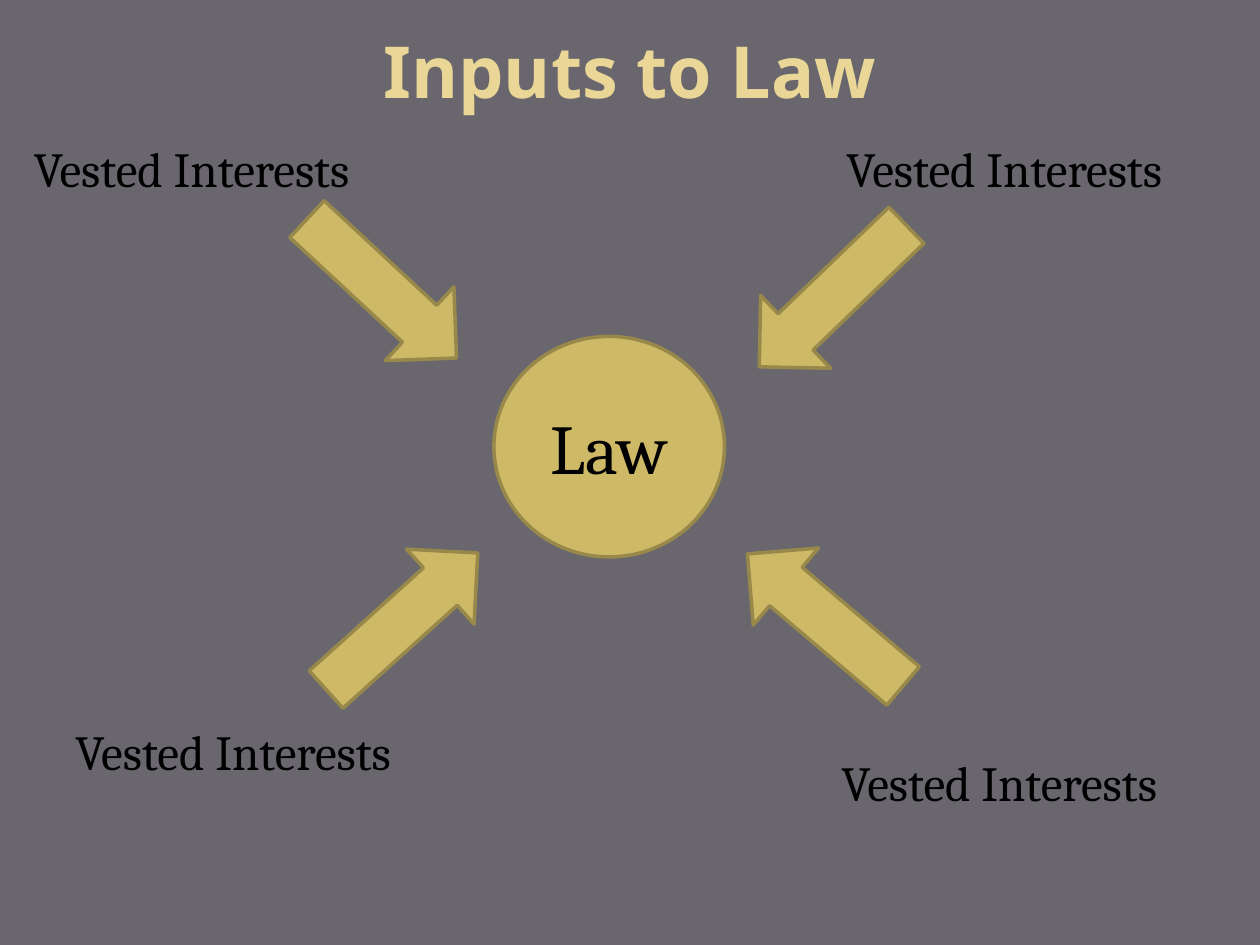
"""Build a slide showing four vested interests feeding into law."""
from dataclasses import dataclass

from pptx import Presentation
from pptx.dml.color import RGBColor
from pptx.enum.shapes import MSO_SHAPE
from pptx.enum.text import MSO_ANCHOR, MSO_AUTO_SIZE, PP_ALIGN
from pptx.util import Inches, Pt

ELLIPSE = MSO_SHAPE.OVAL
DOWN_ARROW = MSO_SHAPE.DOWN_ARROW
CENTER = PP_ALIGN.CENTER
MIDDLE = MSO_ANCHOR.MIDDLE
FIT_SHAPE = MSO_AUTO_SIZE.SHAPE_TO_FIT_TEXT
TITLE_ONLY = 5


@dataclass(frozen=True)
class Theme:
    background: RGBColor = RGBColor.from_string("69676D")
    title: RGBColor = RGBColor.from_string("EAD696")
    fill: RGBColor = RGBColor.from_string("CEB966")
    outline: RGBColor = RGBColor.from_string("98894B")
    text: RGBColor = RGBColor.from_string("000000")
    title_font: str = "Noto Sans"
    body_font: str = "Cambria"
    title_size: Pt = Pt(41)
    law_size: Pt = Pt(40)
    label_size: Pt = Pt(28)
    outline_width: Pt = Pt(2)


theme = Theme()


def style_text(paragraph, text, font_name, size, color):
    paragraph.text = text
    paragraph.font.name = font_name
    paragraph.font.size = size
    paragraph.font.color.rgb = color


def add_gold_shape(kind, left, top, width, height):
    shape = slide.shapes.add_shape(
        kind, Inches(left), Inches(top), Inches(width), Inches(height)
    )
    shape.shadow.inherit = False
    shape.fill.solid()
    shape.fill.fore_color.rgb = theme.fill
    shape.line.color.rgb = theme.outline
    shape.line.width = theme.outline_width
    return shape


presentation = Presentation()
presentation.slide_width = Inches(10)
presentation.slide_height = Inches(7.5)
slide = presentation.slides.add_slide(presentation.slide_layouts[TITLE_ONLY])
slide.background.fill.solid()
slide.background.fill.fore_color.rgb = theme.background

title = slide.shapes.title
title.left, title.top = Inches(0.5), Inches(0.08)
title.width, title.height = Inches(9), Inches(0.95)
title.text_frame.vertical_anchor = MIDDLE
title_paragraph = title.text_frame.paragraphs[0]
style_text(title_paragraph, "Inputs to Law", theme.title_font, theme.title_size, theme.title)
title_paragraph.font.bold = True
title_paragraph.alignment = CENTER

law = add_gold_shape(ELLIPSE, 3.92, 2.67, 1.83, 1.75)
law.text_frame.vertical_anchor = MIDDLE
law_paragraph = law.text_frame.paragraphs[0]
style_text(law_paragraph, "Law", theme.body_font, theme.law_size, theme.text)
law_paragraph.alignment = CENTER

for left, top in [(0.17, 1.05), (6.62, 1.05), (0.5, 5.68), (6.58, 5.92)]:
    label = slide.shapes.add_textbox(Inches(left), Inches(top), Inches(3.07), Inches(0.57))
    label.text_frame.word_wrap = False
    label.text_frame.auto_size = FIT_SHAPE
    style_text(
        label.text_frame.paragraphs[0],
        "Vested Interests",
        theme.body_font,
        theme.label_size,
        theme.text,
    )

for left, top, rotation in [
    (2.63, 1.48, 312.9),
    (6.21, 1.54, 46.1),
    (2.79, 4.12, 228),
    (6.15, 4.11, 130.3),
]:
    arrow = add_gold_shape(DOWN_ARROW, left, top, 0.8, 1.62)
    arrow.rotation = rotation

presentation.save("out.pptx")
